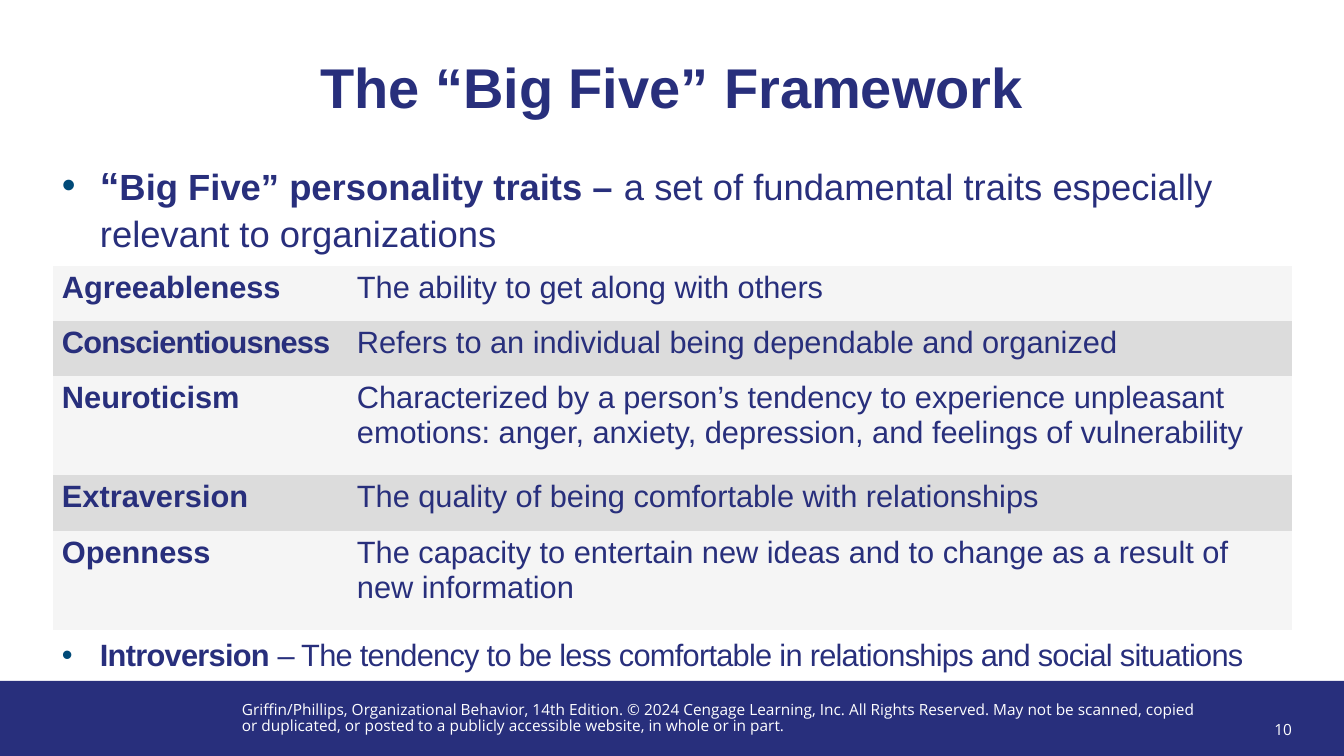
"""Build the slide on the Big Five personality framework."""
from lxml import etree
from pptx import Presentation, util as u
from pptx.dml.color import RGBColor
from pptx.enum import shapes, text
from pptx.oxml.ns import qn

PX = 914400 / 100.8
NAVY, WHITE, TEAL = "282F7C", "FFFFFF", "004A78"


def px(*lengths):
    return [u.Emu(round(n * PX)) for n in lengths]


def add_run(paragraph, words, size, color=NAVY, bold=False, font="Arial", spacing=0):
    run = paragraph.add_run()
    run.text = words
    run.font.size = u.Pt(size)
    run.font.name = font
    run.font.bold = bold
    run.font.color.rgb = RGBColor.from_string(color)
    if spacing:
        run._r.get_or_add_rPr().set("spc", str(spacing))


deck = Presentation()
deck.slide_width, deck.slide_height = px(1344, 756)
slide = deck.slides.add_slide(deck.slide_layouts[5])

footer_band = slide.shapes.add_shape(shapes.MSO_SHAPE.RECTANGLE, *px(0, 681, 1344, 75))
footer_band.shadow.inherit = False
footer_band.fill.solid()
footer_band.fill.fore_color.rgb = RGBColor.from_string(NAVY)
footer_band.line.fill.background()

title = slide.shapes.title
title.left, title.top, title.width, title.height = px(52, 52, 1239, 77)
title.text_frame.auto_size = text.MSO_AUTO_SIZE.NONE
title.text_frame.word_wrap = True
title.text_frame.vertical_anchor = text.MSO_ANCHOR.MIDDLE
heading = title.text_frame.paragraphs[0]
heading.alignment = text.PP_ALIGN.CENTER
heading.line_spacing = 0.9
add_run(heading, "The “Big Five” Framework", 40, bold=True)

bullets = [
    (154, 77, 1.06, [
        ("“", 28, True, 0),
        ("Big Five” personality traits – ", 26, True, 0),
        ("a set of fundamental traits especially relevant to organizations", 26, False, 0),
    ]),
    (631, 46, 1.0, [
        ("Introversion", 22, True, -50),
        (" – The tendency to be less comfortable in relationships and social situations",
         22, False, -50),
    ]),
]
for top, height, leading, parts in bullets:
    frame = slide.shapes.add_textbox(*px(52, top, 1239, height)).text_frame
    frame.word_wrap = True
    point = frame.paragraphs[0]
    point.line_spacing = leading
    indent, = px(38)
    props = point._p.get_or_add_pPr()
    props.set("marL", str(indent))
    props.set("indent", str(-indent))
    bullet_color = etree.SubElement(props, qn("a:buClr"))
    etree.SubElement(bullet_color, qn("a:srgbClr"), val=TEAL)
    etree.SubElement(props, qn("a:buFont"), typeface="Arial")
    etree.SubElement(props, qn("a:buChar"), char="•")
    for words, size, bold, spacing in parts:
        add_run(point, words, size, bold=bold, spacing=spacing)

traits = [
    ("Agreeableness", "The ability to get along with others", 55),
    ("Conscientiousness", "Refers to an individual being dependable and organized", 55),
    ("Neuroticism", "Characterized by a person’s tendency to experience unpleasant "
     "emotions: anger, anxiety, depression, and feelings of vulnerability", 99),
    ("Extraversion", "The quality of being comfortable with relationships", 56),
    ("Openness", "The capacity to entertain new ideas and to change as a result of "
     "new information", 99),
]
trait_table = slide.shapes.add_table(len(traits), 2, *px(53, 266, 1239, 364)).table
trait_table.first_row = trait_table.horz_banding = False
style_id = trait_table._tbl.tblPr.find(qn("a:tableStyleId"))
style_id.text = "{2D5ABB26-0587-4C30-8999-92F81FD0307C}"
for column, width in zip(trait_table.columns, px(295, 944)):
    column.width = width
for row, (trait, meaning, height) in enumerate(traits):
    trait_table.rows[row].height, = px(height)
    for col, words in enumerate((trait, meaning)):
        cell = trait_table.cell(row, col)
        cell.margin_left, cell.margin_top, cell.margin_right, cell.margin_bottom = px(9, 5, 9, 5)
        cell.fill.solid()
        cell.fill.fore_color.rgb = RGBColor.from_string(("F5F5F5", "DCDCDC")[row % 2])
        add_run(cell.text_frame.paragraphs[0], words, 22, bold=col == 0,
                spacing=-60 if words == "Conscientiousness" else 0)

footer_texts = [
    ((232, 697, 988, 47), text.MSO_ANCHOR.TOP, text.PP_ALIGN.LEFT,
     "Griffin/Phillips, Organizational Behavior, 14th Edition. © 2024 Cengage Learning, Inc. "
     "All Rights Reserved. May not be scanned, copied or duplicated, or posted to a publicly "
     "accessible website, in whole or in part."),
    ((1222, 711, 80, 40), text.MSO_ANCHOR.MIDDLE, text.PP_ALIGN.RIGHT, "10"),
]
for box, anchor, alignment, words in footer_texts:
    frame = slide.shapes.add_textbox(*px(*box)).text_frame
    frame.word_wrap = True
    frame.vertical_anchor = anchor
    line = frame.paragraphs[0]
    line.alignment = alignment
    line.line_spacing = 0.9
    add_run(line, words, 11, WHITE, font="Open Sans")

deck.save("out.pptx")
